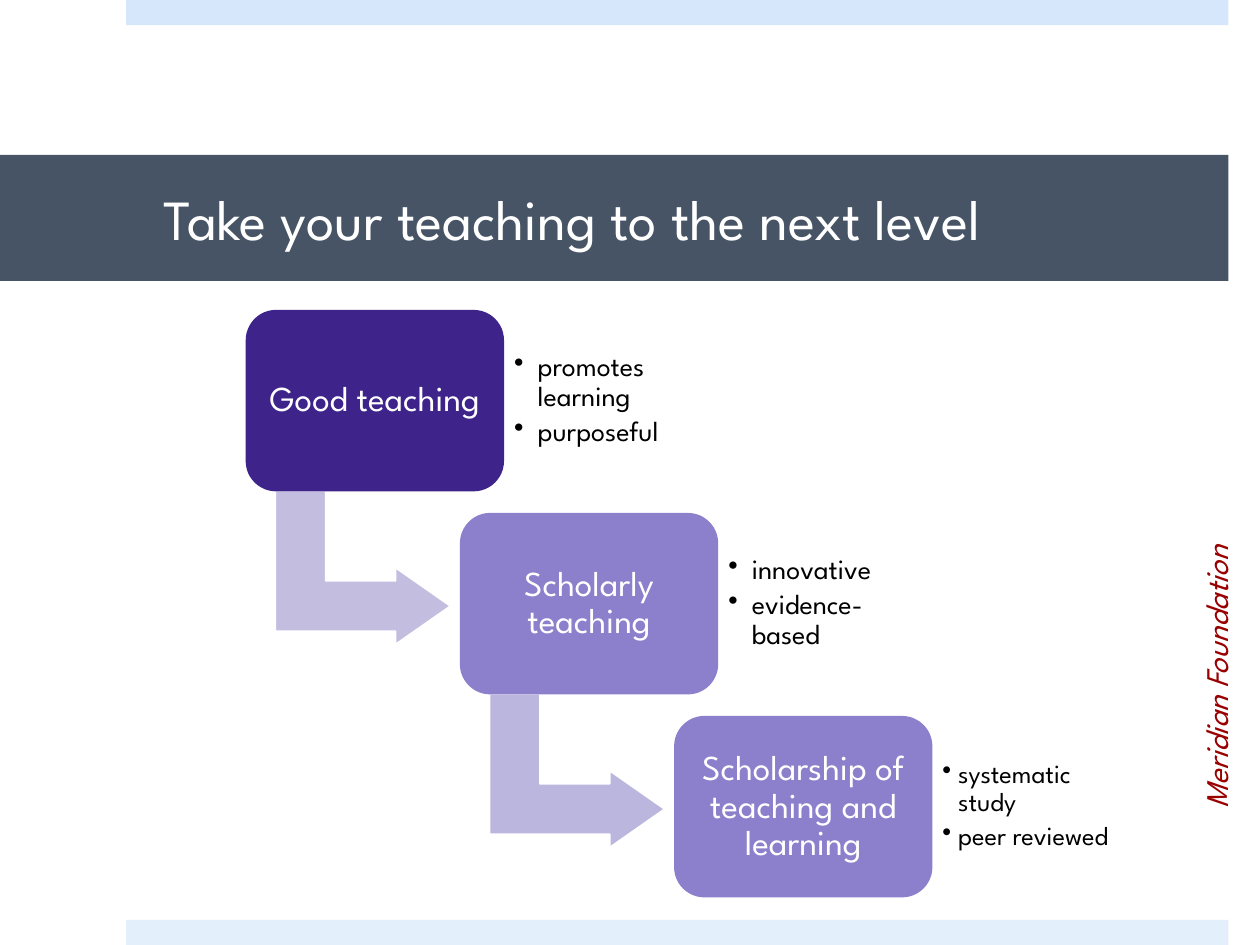
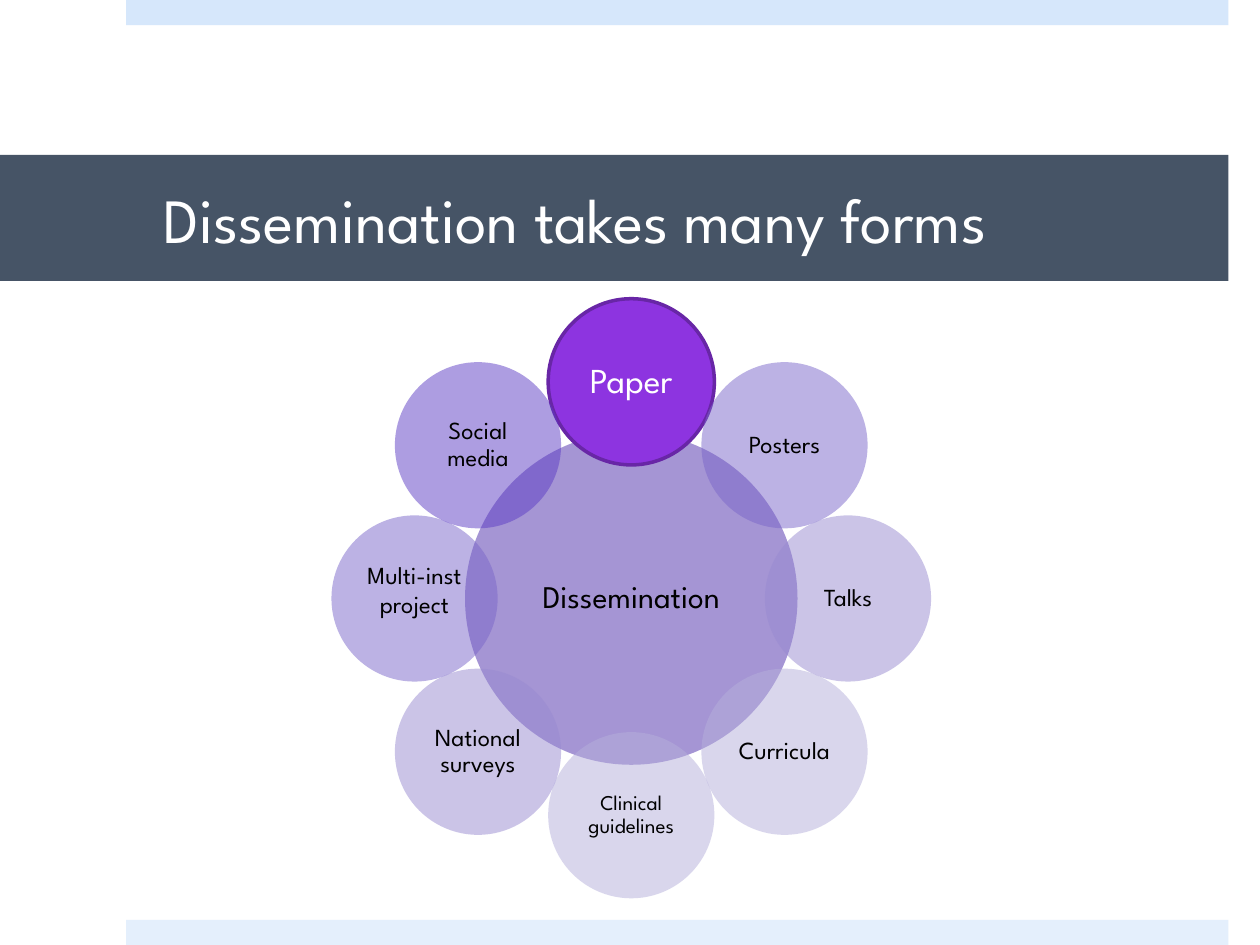
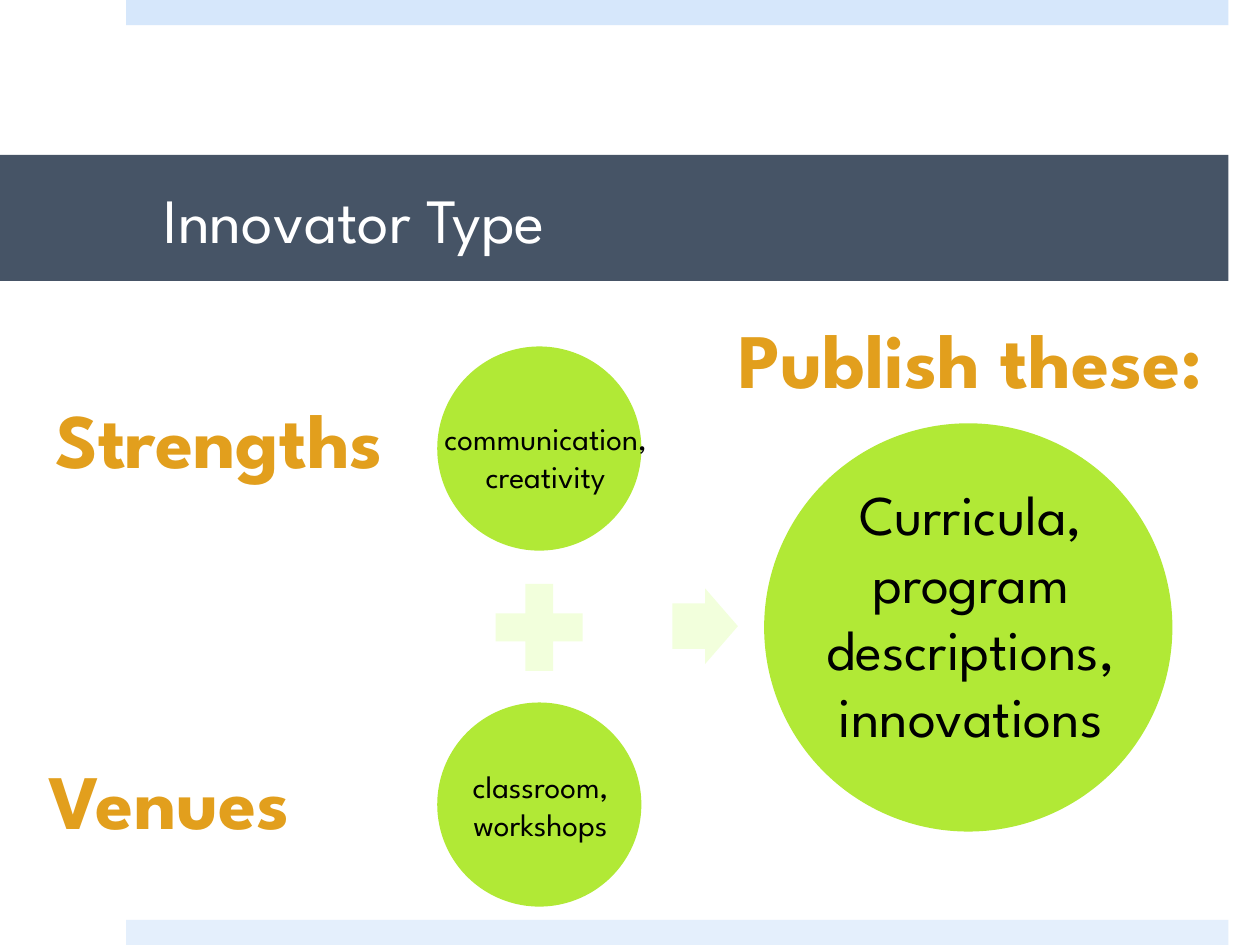
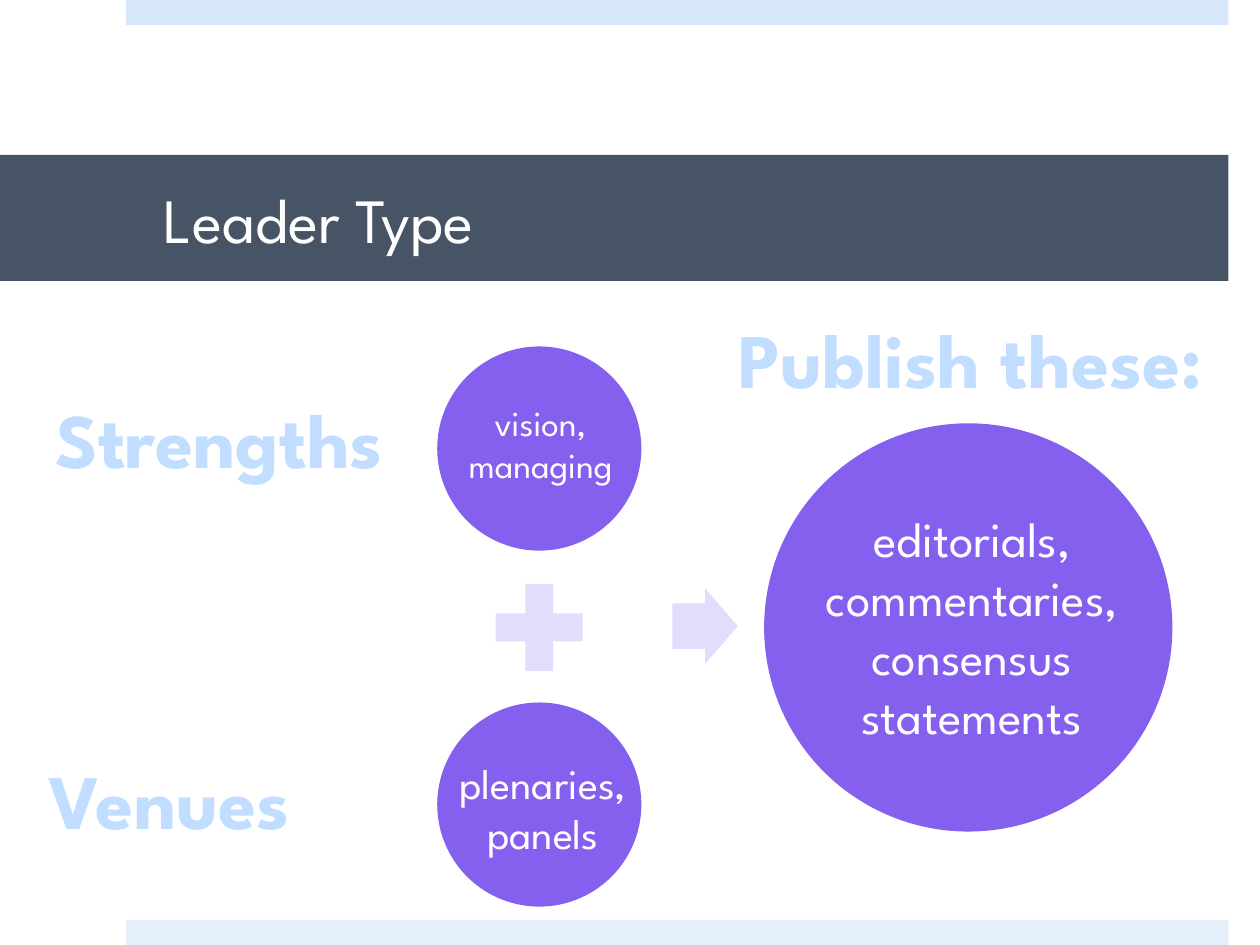
"""Build four slides on scholarly teaching and its dissemination."""
from math import cos, pi, sin

from lxml.etree import SubElement
from pptx import Presentation
from pptx.dml.color import RGBColor as RGB
from pptx.enum.shapes import MSO_SHAPE as SHP
from pptx.enum.text import MSO_ANCHOR as ANCHOR, MSO_AUTO_SIZE as AUTO, PP_ALIGN as ALIGN
from pptx.oxml.ns import qn
from pptx.util import Pt

FONT = "League Spartan"
COLORS = {
    "white": "FFFFFF", "black": "000000", "red": "990000", "outline": "3D536F",
    "top": "D6E7FB", "bottom": "E4EFFC", "title": "465466",
    "indigo": "3E248A", "lavender": "8C7FCB", "arrow1": "C3BEE0", "arrow2": "BBB6DD",
    "hub": "4C2CAA", "paper": "8D34E0", "paper_edge": "6826A6",
    "petal1": "7A66CA", "petal2": "988BD1", "petal3": "B5AFDB", "petal4": "5D3DC5",
    "lime": "B1E936", "pale_lime": "F2FFDC", "gold": "E29F1D",
    "violet": "855FEE", "pale_violet": "E3DDFC", "sky": "C1DDFF",
}


class Deck:
    """Hold the style and the current slide."""

    def __init__(self):
        self.prs = Presentation()
        self.prs.slide_width, self.prs.slide_height = Pt(720), Pt(540)

    def slide(self, title, size=36):
        self.s = self.prs.slides.add_slide(self.prs.slide_layouts[6])
        self.shape(SHP.RECTANGLE, 72, 0, 630, 14.4, "top")
        self.shape(SHP.RECTANGLE, 72, 525.6, 630, 14.4, "bottom")
        sp = self.shape(SHP.RECTANGLE, 0, 88.56, 702, 72, "title")
        self.text(sp, title, size, "white", ALIGN.LEFT, insets=(93.6, 3.6, 21.6, 3.6))

    def shape(self, kind, x, y, w, h, fill, line=None, width=1, adj=(), alpha=None):
        sp = self.s.shapes.add_shape(kind, Pt(x), Pt(y), Pt(w), Pt(h))
        sp.shadow.inherit = False
        sp.fill.solid()
        sp.fill.fore_color.rgb = RGB.from_string(COLORS[fill])
        if alpha:
            color = sp.element.spPr.find(".//" + qn("a:srgbClr"))
            SubElement(color, qn("a:alpha"), val=str(alpha * 1000))
        if line:
            sp.line.color.rgb = RGB.from_string(COLORS[line])
            sp.line.width = Pt(width)
        else:
            sp.line.fill.background()
        for i, value in enumerate(adj):
            sp.adjustments[i] = value
        return sp

    def text(self, sp, text, size, color, align=ALIGN.CENTER, insets=None,
             anchor=ANCHOR.MIDDLE, spacing=None, bold=None, italic=None):
        tf = sp.text_frame
        tf.text = text
        tf.word_wrap = True
        tf.vertical_anchor = anchor
        if insets:
            tf.margin_left, tf.margin_top, tf.margin_right, tf.margin_bottom = map(Pt, insets)
        for p in tf.paragraphs:
            p.alignment = align
            p.line_spacing = spacing
            for r in p.runs:
                r.font.name, r.font.size = FONT, Pt(size)
                r.font.bold, r.font.italic = bold, italic
                r.font.color.rgb = RGB.from_string(COLORS[color])
        return tf

    def box(self, x, y, w, h, text, size, color, align=ALIGN.CENTER, wrap=False, **style):
        sp = self.s.shapes.add_textbox(Pt(x), Pt(y), Pt(w), Pt(h))
        tf = self.text(sp, text, size, color, align, anchor=ANCHOR.TOP, **style)
        tf.word_wrap = wrap
        tf.auto_size = AUTO.SHAPE_TO_FIT_TEXT
        return sp

    def heading(self, x, y, w, text, color, align=ALIGN.CENTER):
        sp = self.box(x, y, w, 60.48, text, 44, color, align, bold=True)
        for r in sp.text_frame.paragraphs[0].runs:
            rPr = r._r.get_or_add_rPr()
            ln = SubElement(rPr, qn("a:ln"), w=str(Pt(1)))
            fill = SubElement(ln, qn("a:solidFill"))
            SubElement(fill, qn("a:srgbClr"), val=COLORS["outline"])
            rPr.insert(0, ln)

    def bullets(self, x, y, w, h, text, size, indent):
        sp = self.s.shapes.add_textbox(Pt(x), Pt(y), Pt(w), Pt(h))
        tf = self.text(sp, text, size, "black", ALIGN.LEFT, (5.76,) * 4, spacing=0.9)
        for p in tf.paragraphs:
            p.space_after = Pt(3)
            pPr = p._p.get_or_add_pPr()
            pPr.set("marL", str(Pt(indent)))
            pPr.set("indent", str(-Pt(indent)))
            SubElement(pPr, qn("a:buChar"), char="•")

    def staircase(self, steps):
        for i, (name, fill, arrow, points, size, indent) in enumerate(steps):
            x, y = 140.4 + 122.4 * i, 177.12 + 116 * i
            if arrow:
                sp = self.shape(SHP.BENT_UP_ARROW, x + 23.04, y + 97.2, 87.84, 100.08,
                                arrow, "white", adj=(0.328, 0.25, 0.358))
                sp.rotation = 90
            sp = self.shape(SHP.ROUNDED_RECTANGLE, x, y, 147.6, 103.68, fill, adj=(0.167,))
            self.text(sp, name, 20, "white", insets=(5.76,) * 4, spacing=0.9)
            self.bullets(x + 147.6, y + 9.72, 107.28, 83.52, points, size, indent)

    def circle(self, cx, cy, d, fill, text, size, color="black", spacing=0.9, bottom=1.5, **look):
        sp = self.shape(SHP.OVAL, cx - d / 2, cy - d / 2, d, d, fill, **look)
        self.text(sp, text, size, color, insets=(1.5, 1.5, 1.5, bottom), spacing=spacing)

    def flower(self, hub, petals):
        cx, cy, radius = 360.72, 342, 123.84
        self.circle(cx, cy, 190, "hub", hub, 18, alpha=50)
        for i, (text, fill, look) in enumerate(petals):
            angle = 2 * pi * i / len(petals)
            look = {"size": 14, "alpha": 50, **look}
            self.circle(cx + radius * sin(angle), cy - radius * cos(angle), 95, fill, text, **look)

    def profile(self, title, fill, pale, accent, ink, notes, result):
        self.slide(title)
        self.heading(20.88, 220.32, 208.8, "Strengths", accent)
        self.heading(20.88, 426.24, 175.68, "Venues", accent, ALIGN.LEFT)
        self.shape(SHP.OVAL, 249.84, 198, 116.64, 116.64, fill)
        self.shape(SHP.MATH_PLUS, 274.32, 324.72, 67.68, 67.68, pale)
        self.shape(SHP.OVAL, 249.84, 401.4, 116.64, 116.64, fill)
        self.shape(SHP.RIGHT_ARROW, 384.2, 336.24, 37.44, 43.2, pale, adj=(0.6, 0.5))
        self.shape(SHP.OVAL, 436.68, 241.92, 233.28, 233.28, fill)
        for x, y, w, h, text, size in notes:
            self.box(x, y, w, h, text, size, ink)
        self.heading(402.48, 174.24, 304.56, "Publish these:", accent)
        x, y, w, h, text, size = result
        self.box(x, y, w, h, text, size, ink, wrap=True)


def main():
    deck = Deck()

    deck.slide("Take your teaching to the next level", 32.4)
    deck.staircase([
        ("Good teaching", "indigo", "arrow1", "promotes learning\npurposeful", 16, 13.5),
        ("Scholarly teaching", "lavender", "arrow2", "innovative\nevidence-based", 16, 13.5),
        ("Scholarship of teaching and learning", "lavender", None,
         "systematic study\npeer reviewed", 15, 9),
    ])
    source = deck.box(600.48, 384.48, 188.64, 28.8, "Meridian Foundation", 18, "red",
                      ALIGN.RIGHT, italic=True)
    source.rotation = 270

    deck.slide("Dissemination takes many forms")
    deck.flower("Dissemination", [
        ("Paper", "paper", {"size": 20, "color": "white", "alpha": None,
                            "line": "paper_edge", "width": 2}),
        ("Posters", "petal1", {}),
        ("Talks", "petal2", {}),
        ("Curricula", "petal3", {}),
        ("Clinical guidelines", "petal3", {"size": 12}),
        ("National surveys", "petal2", {}),
        ("Multi-inst project", "petal1", {"spacing": 1.0, "bottom": 12}),
        ("Social media", "petal4", {}),
    ])

    deck.profile("Innovator Type", "lime", "pale_lime", "gold", "black", [
        (231.84, 236.16, 159.84, 51.12, "communication,\ncreativity", 18),
        (254.88, 434.88, 108, 51.12, "classroom,\nworkshops", 18),
    ], (434.16, 270.72, 241.2, 162.72, "Curricula, program descriptions, innovations", 32))

    deck.profile("Leader Type", "violet", "pale_violet", "sky", "white", [
        (250.56, 226.08, 116.64, 55.44, "vision,\nmanaging", 20),
        (246.96, 429.12, 126.72, 65.52, "plenaries,\npanels", 24),
    ], (441.36, 287.28, 228.24, 143.28, "editorials, commentaries, consensus statements", 28))

    deck.prs.save("out.pptx")


if __name__ == "__main__":
    main()
